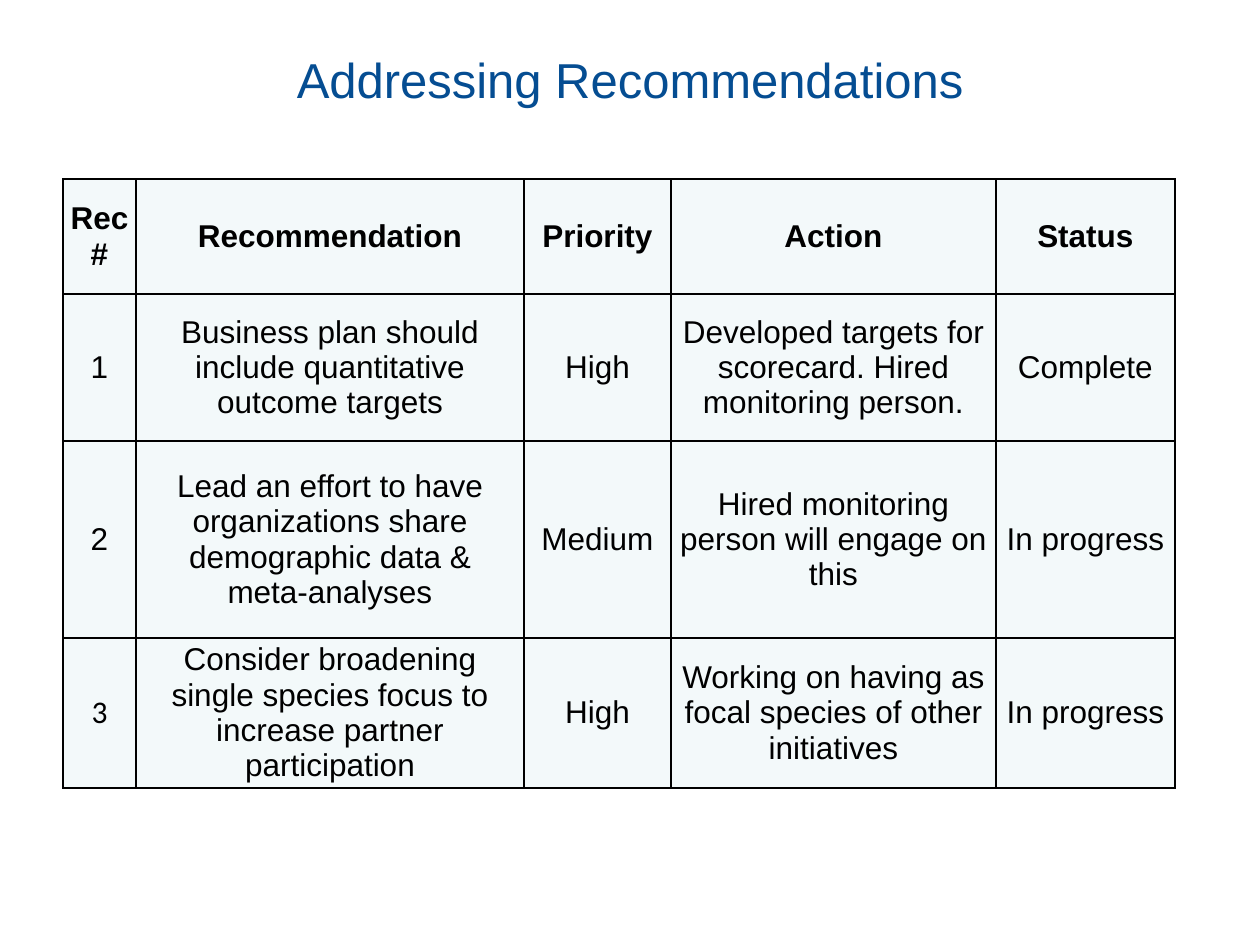
from dataclasses import dataclass
from typing import Any

from lxml.etree import SubElement
from pptx import Presentation
from pptx.dml.color import RGBColor
from pptx.enum.text import MSO_ANCHOR, MSO_AUTO_SIZE, PP_ALIGN
from pptx.oxml.ns import qn
from pptx.util import Emu, Pt

PX_PER_INCH = 126
BLUE = RGBColor(0x05, 0x4D, 0x92)
BLACK = RGBColor(0x00, 0x00, 0x00)
PALE = RGBColor(0xF3, 0xF9, 0xFA)
WHITE = RGBColor(0xFF, 0xFF, 0xFF)
BORDER_WIDTH = Pt(1)
COLUMN_WIDTHS = (73, 388, 147, 325, 179)
ROW_HEIGHTS = (115, 147, 197, 150)
HEADINGS = ("Rec #", "Recommendation", "Priority", "Action", "Status")


@dataclass(frozen=True)
class Recommendation:
    number: str
    advice: str
    priority: str
    action: str
    status: str
    number_font: str = "Arial"


RECOMMENDATIONS = (
    Recommendation(
        "1",
        "Business plan should include quantitative outcome targets",
        "High",
        "Developed targets for scorecard. Hired monitoring person.",
        "Complete",
    ),
    Recommendation(
        "2",
        "Lead an effort to have organizations share demographic data & meta-analyses",
        "Medium",
        "Hired monitoring person will engage on this",
        "In progress",
    ),
    Recommendation(
        "3",
        "Consider broadening single species focus to increase partner participation",
        "High",
        "Working on having as focal species of other initiatives",
        "In progress",
        "Calibri",
    ),
)


def px(length: int) -> Emu:
    return Emu(round(length * 914400 / PX_PER_INCH))


def set_format(target: Any, values: dict[str, Any]) -> None:
    for name, value in values.items():
        setattr(target, name, value)


def write_text(frame: Any, text: str, color: RGBColor, font: dict[str, Any]) -> None:
    para = frame.paragraphs[0]
    para.alignment = PP_ALIGN.CENTER
    span = para.add_run()
    span.text = text
    set_format(span.font, font)
    span.font.color.rgb = color


def add_borders(cell: Any) -> None:
    properties = cell._tc.get_or_add_tcPr()
    for position, side in enumerate(("lnL", "lnR", "lnT", "lnB")):
        line = SubElement(properties, qn(f"a:{side}"), w=str(BORDER_WIDTH))
        fill = SubElement(line, qn("a:solidFill"))
        SubElement(fill, qn("a:srgbClr"), val=str(BLACK))
        properties.insert(position, line)


def fill_cell(cell: Any, text: str, font: str, bold: bool, side_margin: int) -> None:
    set_format(cell, {
        "margin_left": px(side_margin),
        "margin_right": px(side_margin),
        "margin_top": 0,
        "margin_bottom": 0,
        "vertical_anchor": MSO_ANCHOR.MIDDLE,
    })
    cell.fill.solid()
    cell.fill.fore_color.rgb = PALE
    add_borders(cell)
    write_text(cell.text_frame, text, BLACK, {"name": font, "size": Pt(18), "bold": bold})


def add_title(page: Any, text: str) -> None:
    box = page.shapes.title
    set_format(box, {"left": px(94), "top": px(42), "width": px(1072), "height": px(73)})
    set_format(box.text_frame, {
        "word_wrap": True,
        "auto_size": MSO_AUTO_SIZE.NONE,
        "vertical_anchor": MSO_ANCHOR.BOTTOM,
    })
    write_text(box.text_frame, text, BLUE, {"name": "Arial", "size": Pt(28), "bold": False})


def add_recommendation_table(page: Any) -> None:
    table = page.shapes.add_table(
        len(ROW_HEIGHTS), len(COLUMN_WIDTHS), px(63), px(179),
        px(sum(COLUMN_WIDTHS)), px(sum(ROW_HEIGHTS)),
    ).table
    set_format(table, {"first_row": False, "horz_banding": False})
    for column, width in zip(table.columns, COLUMN_WIDTHS):
        column.width = px(width)
    for row, height in zip(table.rows, ROW_HEIGHTS):
        row.height = px(height)
    for column, heading in enumerate(HEADINGS):
        fill_cell(table.cell(0, column), heading, "Arial", True, 0)
    for row, item in enumerate(RECOMMENDATIONS, start=1):
        texts = (item.number, item.advice, item.priority, item.action, item.status)
        for column, text in enumerate(texts):
            font = item.number_font if column == 0 else "Arial"
            side_margin = 13 if column == 1 else 0
            fill_cell(table.cell(row, column), text, font, False, side_margin)


def main() -> None:
    deck = Presentation()
    set_format(deck, {"slide_width": px(1260), "slide_height": px(945)})
    page = deck.slides.add_slide(deck.slide_layouts[5])
    page.background.fill.solid()
    page.background.fill.fore_color.rgb = WHITE
    add_title(page, "Addressing Recommendations")
    add_recommendation_table(page)
    deck.save("out.pptx")


if __name__ == "__main__":
    main()
